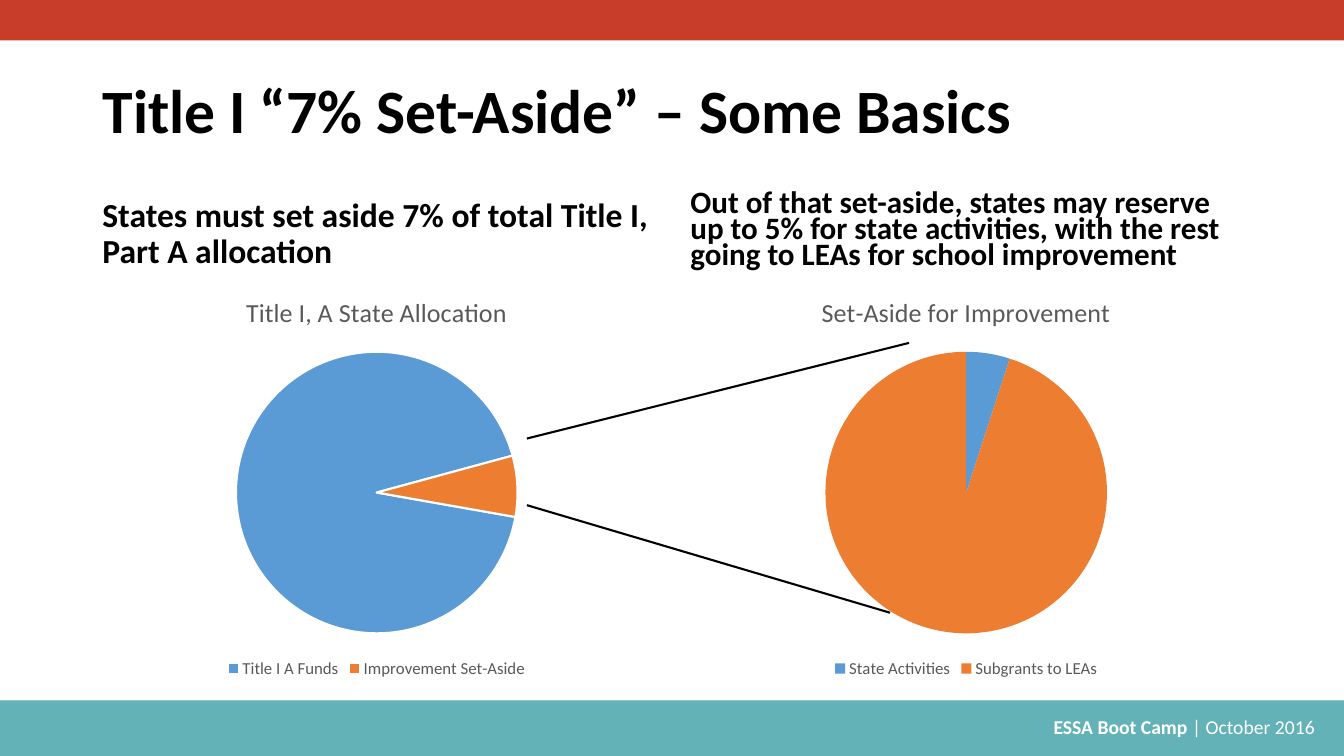
from dataclasses import dataclass

from pptx import Presentation
from pptx import util as u
from pptx.chart import data
from pptx.dml import color
from pptx.enum import chart as ch, shapes, text
from pptx.oxml import xmlchemy as xml


@dataclass(frozen=True)
class Theme:
    font: str = "Calibri"
    ink: str = "000000"
    gray: str = "595959"
    white: str = "FFFFFF"
    red: str = "C83C2A"
    teal: str = "63B2B8"
    pie: tuple = ("5B9BD5", "ED7D31")
    head: float = 44
    lead: float = 24
    tight: float = 22.2
    name: float = 18.6
    foot: float = 14
    key: float = 12


T = Theme()
WIDE, HIGH = 33.87, 19.05


def rgb(tone):
    return color.RGBColor.from_string(tone)


def style(font, size, tone, bold=False):
    font.name, font.size, font.bold = T.font, u.Pt(size), bold
    font.color.rgb = rgb(tone)


def place(box):
    return [u.Cm(side) for side in box]


def write(frame, *runs, size, tone=T.ink, bold=True, align=text.PP_ALIGN.LEFT,
          anchor=text.MSO_ANCHOR.MIDDLE, line=1, before=0):
    frame.word_wrap = True
    frame.auto_size = text.MSO_AUTO_SIZE.NONE
    frame.vertical_anchor = anchor
    para = frame.paragraphs[0]
    para.alignment, para.line_spacing = align, line
    para.space_before = u.Pt(before)
    for spot, words in enumerate(runs):
        run = para.add_run()
        run.text = words
        style(run.font, size, tone, bold and spot == 0)


def band(slide, box, tone):
    bar = slide.shapes.add_shape(shapes.MSO_SHAPE.RECTANGLE, *place(box))
    bar.shadow.inherit = False
    bar.fill.solid()
    bar.fill.fore_color.rgb = rgb(tone)
    bar.line.fill.background()


def footer(slide, box):
    left, top, wide, high = box
    band(slide, box, T.teal)
    note = slide.shapes.add_textbox(
        *place((left + 12.19, top + 0.23, wide - 12.56, 0.86)))
    write(note.text_frame, "ESSA Boot Camp ", "| October 2016 ", size=T.foot,
          tone=T.white, align=text.PP_ALIGN.RIGHT)


def title(slide, box, words):
    head = slide.shapes.title
    head.left, head.top, head.width, head.height = place(box)
    write(head.text_frame, words, size=T.head, line=0.9)


def pie(slide, box, name, parts, start, edge):
    table = data.CategoryChartData()
    table.categories = list(parts)
    table.add_series(name, list(parts.values()))
    chart = slide.shapes.add_chart(
        ch.XL_CHART_TYPE.PIE, *place(box), table).chart
    style(chart.font, T.key, T.gray)
    chart.has_title = True
    frame = chart.chart_title.text_frame
    frame.text = name
    style(frame.paragraphs[0].runs[0].font, T.name, T.gray)
    chart.chart_title.include_in_layout = False
    chart.has_legend = True
    chart.legend.position = ch.XL_LEGEND_POSITION.BOTTOM
    chart.legend.include_in_layout = False
    style(chart.legend.font, T.key, T.gray)
    plot = chart.plots[0]
    plot.vary_by_categories = True
    turn = xml.OxmlElement("c:firstSliceAng")
    turn.set("val", str(start))
    for old in plot._element.findall(turn.tag):
        plot._element.remove(old)
    plot._element.append(turn)
    for spot, tone in enumerate(T.pie):
        form = plot.series[0].points[spot].format
        form.fill.solid()
        form.fill.fore_color.rgb = rgb(tone)
        if edge:
            form.line.color.rgb = rgb(T.white)
            form.line.width = u.Pt(1.5)
        else:
            form.line.fill.background()


def panel(slide, box, words, size, line, name, parts, start=0, edge=False):
    left, top, wide, high = box
    lead = 2.28
    note = slide.shapes.add_textbox(*place((left, top, wide, lead)))
    write(note.text_frame, words, size=size, line=line, before=10,
          anchor=text.MSO_ANCHOR.BOTTOM)
    pie(slide, (left, top + lead, wide, high - lead), name, parts, start, edge)


def link(slide, *ends):
    rule = slide.shapes.add_connector(
        shapes.MSO_CONNECTOR.STRAIGHT, *place(ends))
    rule.line.color.rgb = rgb(T.ink)
    rule.line.width = u.Pt(1.5)
    rule._element.spPr.append(xml.OxmlElement("a:effectLst"))


def main():
    deck = Presentation()
    deck.slide_width, deck.slide_height = u.Cm(WIDE), u.Cm(HIGH)
    slide = deck.slides.add_slide(deck.slide_layouts.get_by_name("Title Only"))
    footer(slide, (0, 17.65, WIDE, HIGH - 17.65))
    band(slide, (0, 0, WIDE, 1.02), T.red)
    title(slide, (2.33, 1.02, 29.21, 3.68), "Title I “7% Set-Aside” – Some Basics")
    panel(slide, (17.15, 4.68, 14.4, 12.52),
          "Out of that set-aside, states may reserve up to 5% for state "
          "activities, with the rest going to LEAs for school improvement",
          T.tight, 0.7, "Set-Aside for Improvement",
          {"State Activities": 5, "Subgrants to LEAs": 95})
    panel(slide, (2.33, 4.68, 14.33, 12.52),
          "States must set aside 7% of total Title I, Part A allocation",
          T.lead, 0.9, "Title I, A State Allocation",
          {"Title I A Funds": 93, "Improvement Set-Aside": 7},
          start=100, edge=True)
    link(slide, 13.28, 11.05, 22.91, 8.64)
    link(slide, 13.28, 12.73, 22.43, 15.44)
    deck.save("out.pptx")


if __name__ == "__main__":
    main()
